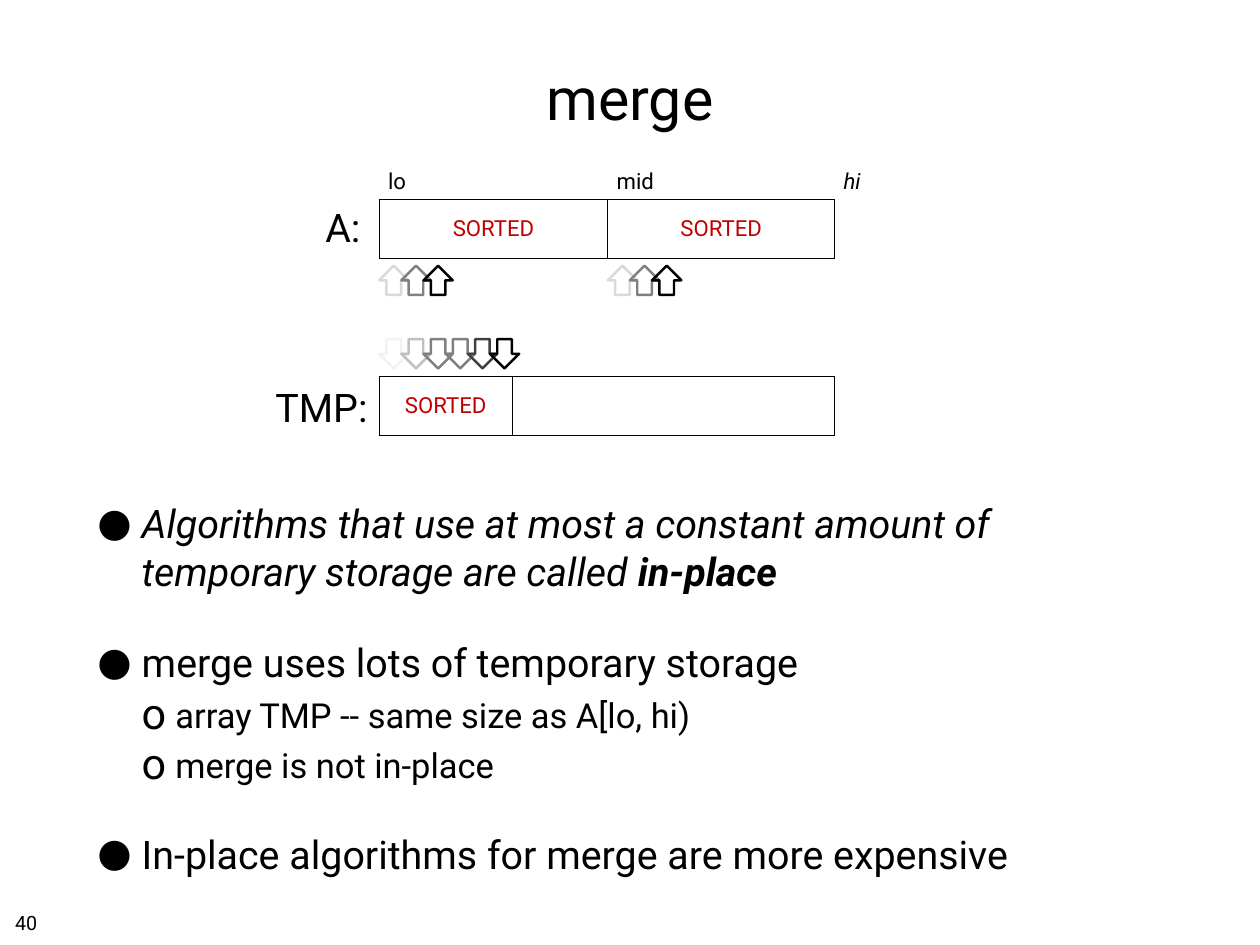
from lxml import etree
from pptx import Presentation
from pptx.dml.color import RGBColor
from pptx.enum.shapes import MSO_SHAPE
from pptx.enum.text import MSO_ANCHOR, PP_ALIGN
from pptx.oxml.ns import qn
from pptx.util import Inches, Pt

UP, DOWN = MSO_SHAPE.UP_ARROW, MSO_SHAPE.DOWN_ARROW
TOP, MIDDLE, BOTTOM = MSO_ANCHOR.TOP, MSO_ANCHOR.MIDDLE, MSO_ANCHOR.BOTTOM
LEFT, CENTER, RIGHT = PP_ALIGN.LEFT, PP_ALIGN.CENTER, PP_ALIGN.RIGHT

COLORS = {
    "black": "000000",
    "red": "C00000",
    "charcoal": "404040",
    "gray": "808080",
    "silver": "BFBFBF",
    "light": "D9D9D9",
    "faint": "F2F2F2",
}
FONT = "Roboto"
ARRAY_LEFT = 4.28
ARROW_SIZE = 0.33
ARROW_STEP = 0.25


class SlideBuilder:
    def __init__(self, page):
        self.page = page

    def add_span(self, para, text, size, color="black", bold=False, italic=False):
        span = para.add_run()
        span.text = text
        span.font.name = FONT
        span.font.size = Pt(size)
        span.font.bold = bold
        span.font.italic = italic
        span.font.color.rgb = RGBColor.from_string(COLORS[color])

    def add_box(self, left, top, width, height, anchor=TOP, wrap=True):
        box = self.page.shapes.add_textbox(
            Inches(left), Inches(top), Inches(width), Inches(height))
        frame = box.text_frame
        frame.word_wrap = wrap
        frame.vertical_anchor = anchor
        frame.margin_left = frame.margin_right = Inches(0.06)
        frame.margin_top = frame.margin_bottom = Inches(0.06)
        return frame

    def add_label(self, text, place, size, align, anchor=MIDDLE, wrap=True):
        para = self.add_box(*place, anchor=anchor, wrap=wrap).paragraphs[0]
        para.alignment = align
        self.add_span(para, text, size)

    def add_bullets(self, place, items):
        frame = self.add_box(*place)
        for index, (level, space, spans) in enumerate(items):
            para = frame.add_paragraph() if index else frame.paragraphs[0]
            para.level = level
            para.space_before = Pt(space)
            margin, hang, mark, scale, size = (
                (0.88, 0.38, "o", 125, 28) if level else (0.5, 0.5, "●", 100, 32))
            properties = para._p.get_or_add_pPr()
            properties.set("marL", str(Inches(margin)))
            properties.set("indent", str(-Inches(hang)))
            etree.SubElement(properties, qn("a:buSzPct"), val=str(scale * 1000))
            etree.SubElement(properties, qn("a:buFont"), typeface=FONT)
            etree.SubElement(properties, qn("a:buChar"), char=mark)
            for text, bold, italic in spans:
                self.add_span(para, text, size, bold=bold, italic=italic)

    def set_borders(self, cell, sides):
        properties = cell._tc.get_or_add_tcPr()
        for side in "LRTB":
            line = etree.SubElement(properties, qn("a:ln" + side), w=str(Pt(1)))
            if side in sides:
                fill = etree.SubElement(line, qn("a:solidFill"))
                etree.SubElement(fill, qn("a:srgbClr"), val=COLORS["black"])
            else:
                etree.SubElement(line, qn("a:noFill"))
        cell.fill.background()

    def add_array(self, top, widths, headings, values):
        table = self.page.shapes.add_table(
            2, 3, Inches(ARRAY_LEFT), Inches(top),
            Inches(sum(widths)), Inches(1.17)).table
        table.first_row = table.horz_banding = False
        for column, width in zip(table.columns, widths):
            column.width = Inches(width)
        table.rows[0].height = Inches(0.5)
        table.rows[1].height = Inches(0.67)
        borders = (("B", "B", ""), ("LRTB", "LRTB", "L"))
        for row, texts in enumerate((headings, values)):
            for column, text in enumerate(texts):
                cell = table.cell(row, column)
                self.set_borders(cell, borders[row][column])
                cell.vertical_anchor = MIDDLE if row else BOTTOM
                if text:
                    para = cell.text_frame.paragraphs[0]
                    para.alignment = CENTER if row else LEFT
                    self.add_span(para, text, 18, "red" if row else "black",
                                  italic=text == "hi")

    def add_arrows(self, kind, left, top, colors):
        for index, color in enumerate(colors):
            arrow = self.page.shapes.add_shape(
                kind, Inches(left + index * ARROW_STEP), Inches(top),
                Inches(ARROW_SIZE), Inches(ARROW_SIZE))
            arrow.shadow.inherit = False
            arrow.fill.background()
            arrow.line.color.rgb = RGBColor.from_string(COLORS[color])
            arrow.line.width = Pt(2)


def main():
    deck = Presentation()
    deck.slide_width = Inches(14.22)
    deck.slide_height = Inches(10.67)
    slide = SlideBuilder(deck.slides.add_slide(deck.slide_layouts[6]))

    slide.add_label("merge", (1.04, 0.28, 12.14, 1.64), 48, CENTER)
    slide.add_bullets((1.04, 5.58, 12.14, 4.12), [
        (0, 8, [("Algorithms that use at most a constant amount of "
                 "temporary storage are called ", False, True),
                ("in-place", True, True)]),
        (0, 36, [("merge uses lots of temporary storage", False, False)]),
        (1, 7, [("array TMP -- same size as A[lo, hi)", False, False)]),
        (1, 7, [("merge is not in-place", False, False)]),
        (0, 36, [("In-place algorithms for merge are more expensive", False, False)]),
    ])

    slide.add_label("A:", (3.53, 2.23, 0.68, 0.65), 32, CENTER)
    slide.add_array(1.75, (2.58, 2.56, 0.45),
                    ("lo", "mid", "hi"), ("SORTED", "SORTED", ""))
    for left in (ARRAY_LEFT, ARRAY_LEFT + 2.58):
        slide.add_arrows(UP, left, 3, ("light", "gray", "black"))

    slide.add_label("TMP:", (2.86, 4.27, 1.35, 0.65), 32, RIGHT)
    slide.add_array(3.75, (1.5, 3.64, 0.45), ("", "", ""), ("SORTED", "", ""))
    slide.add_arrows(DOWN, ARRAY_LEFT, 3.83,
                     ("faint", "silver", "gray", "gray", "charcoal", "black"))

    slide.add_label("40", (0.11, 10.23, 0.37, 0.35), 16, LEFT, TOP, wrap=False)
    deck.save("out.pptx")


if __name__ == "__main__":
    main()
